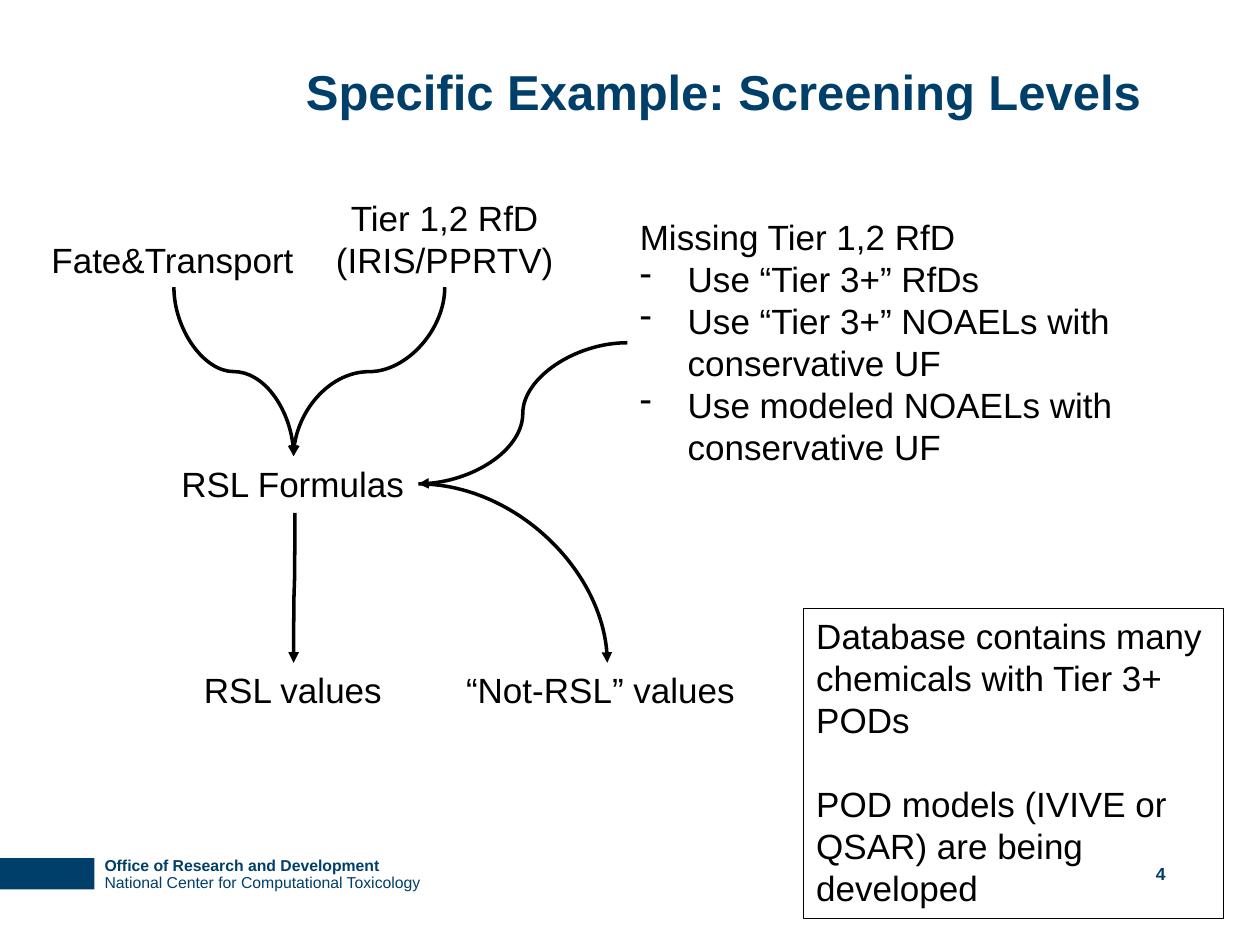
"""Builds the slide on screening levels as a flow of labels and curved arrows."""
from pptx import Presentation
from pptx import util as u
from pptx.dml.color import RGBColor
from pptx.enum import shapes, text
from pptx.oxml.ns import qn
from lxml import etree

NAVY, BLACK = "003F69", "000000"


def colour(code):
    return RGBColor.from_string(code)


class SlideBuilder:
    font = "Arial"
    size = 20
    arrow_width = 2

    def __init__(self, slide):
        self.slide = slide

    def bar(self, left, top, width, height, fill):
        bar = self.slide.shapes.add_shape(
            shapes.MSO_SHAPE.RECTANGLE, *map(u.Inches, (left, top, width, height)))
        bar.shadow.inherit = False
        bar.fill.solid()
        bar.fill.fore_color.rgb = colour(fill)
        bar.line.fill.background()

    def label(self, left, top, width, height, lines, size=None, code=BLACK, bold=False,
              align=text.PP_ALIGN.LEFT, anchor=text.MSO_ANCHOR.TOP, wrap=True, inset=True):
        box = self.slide.shapes.add_textbox(*map(u.Inches, (left, top, width, height)))
        frame = box.text_frame
        frame.word_wrap = wrap
        frame.vertical_anchor = anchor
        if not inset:
            frame.margin_left = frame.margin_right = frame.margin_top = frame.margin_bottom = 0
        frame.text = "\n".join(lines)
        for para in frame.paragraphs:
            para.alignment = align
            for span in para.runs:
                span.font.name = self.font
                span.font.size = u.Pt(size or self.size)
                span.font.bold = bold
                span.font.color.rgb = colour(code)
        return box

    def dash(self, para, indent=0.38):
        props = para._p.get_or_add_pPr()
        props.set("marL", str(u.Inches(indent)))
        props.set("indent", str(-u.Inches(indent)))
        etree.SubElement(props, qn("a:buChar")).set("char", "-")

    def arrow(self, start, end, downward=False, quarter=False):
        (x1, y1), (x2, y2) = start, end
        turn = 0
        if downward:
            mid_x, mid_y = (x1 + x2) / 2, (y1 + y2) / 2
            half_w, half_h = (y2 - y1) / 2, abs(x2 - x1) / 2
            side, turn = (1, 270) if x2 > x1 else (-1, 90)
            x1, x2 = mid_x + side * half_w, mid_x - side * half_w
            y1, y2 = mid_y - half_h, mid_y + half_h
        arrow = self.slide.shapes.add_connector(
            shapes.MSO_CONNECTOR.CURVE, *map(u.Inches, (x1, y1, x2, y2)))
        arrow.line.color.rgb = colour(BLACK)
        arrow.line.width = u.Pt(self.arrow_width)
        props = arrow._element.spPr
        if turn:
            props.find(qn("a:xfrm")).set("rot", str(turn * 60000))
        if quarter:
            props.find(qn("a:prstGeom")).set("prst", "curvedConnector2")
        etree.SubElement(props.find(qn("a:ln")), qn("a:tailEnd")).set("type", "triangle")
        etree.SubElement(props, qn("a:effectLst"))


def main():
    deck = Presentation()
    deck.slide_width, deck.slide_height = u.Inches(10), u.Inches(7.5)
    page = SlideBuilder(deck.slides.add_slide(deck.slide_layouts[6]))
    middle = text.MSO_ANCHOR.MIDDLE

    footer = page.label(0.83, 6.81, 6.17, 0.27,
                        ["Office of Research and Development",
                         "National Center for Computational Toxicology"],
                        size=9, code=NAVY, align=text.PP_ALIGN.JUSTIFY,
                        anchor=text.MSO_ANCHOR.BOTTOM, inset=False)
    for para in footer.text_frame.paragraphs:
        para.line_spacing = 0.9
    footer.text_frame.paragraphs[0].runs[0].font.bold = True
    page.bar(0, 6.81, 0.75, 0.25, NAVY)
    page.label(2.33, 0.58, 7.38, 0.28, ["Specific Example: Screening Levels"],
               size=28, code=NAVY, bold=True, anchor=middle)
    page.label(7.17, 6.81, 2.08, 0.25, ["4"], size=10, code=NAVY, bold=True,
               align=text.PP_ALIGN.RIGHT, anchor=middle, inset=False)

    page.label(2.56, 1.51, 1.94, 0.77, ["Tier 1,2 RfD", "(IRIS/PPRTV)"],
               align=text.PP_ALIGN.CENTER, wrap=False)
    for left, top, width, name in [(0.31, 1.84, 2.14, "Fate&Transport"),
                                   (1.34, 3.62, 1.98, "RSL Formulas"),
                                   (1.52, 5.26, 1.63, "RSL values"),
                                   (3.6, 5.26, 2.45, "“Not-RSL” values")]:
        page.label(left, top, width, 0.44, [name], wrap=False)

    missing = page.label(4.98, 1.66, 4.73, 2.12,
                         ["Missing Tier 1,2 RfD",
                          "Use “Tier 3+” RfDs",
                          "Use “Tier 3+” NOAELs with conservative UF",
                          "Use modeled NOAELs with conservative UF"])
    for para in missing.text_frame.paragraphs[1:]:
        page.dash(para)

    database = page.label(6.38, 4.83, 3.33, 2.46,
                          ["Database contains many chemicals with Tier 3+ PODs",
                           "POD models (IVIVE or QSAR) are being developed"])
    database.line.color.rgb = colour(BLACK)
    database.line.width = u.Pt(0.75)
    database.text_frame.paragraphs[1].space_before = u.Pt(24)

    formulas_top, formulas_side = (2.33, 3.62), (3.32, 3.84)
    page.arrow((1.38, 2.28), formulas_top, downward=True)
    page.arrow((3.53, 2.28), formulas_top, downward=True)
    page.arrow((2.34, 4.07), (2.33, 5.26), downward=True)
    page.arrow((4.98, 2.72), formulas_side)
    page.arrow(formulas_side, (4.82, 5.26), quarter=True)

    deck.save("out.pptx")


if __name__ == "__main__":
    main()
